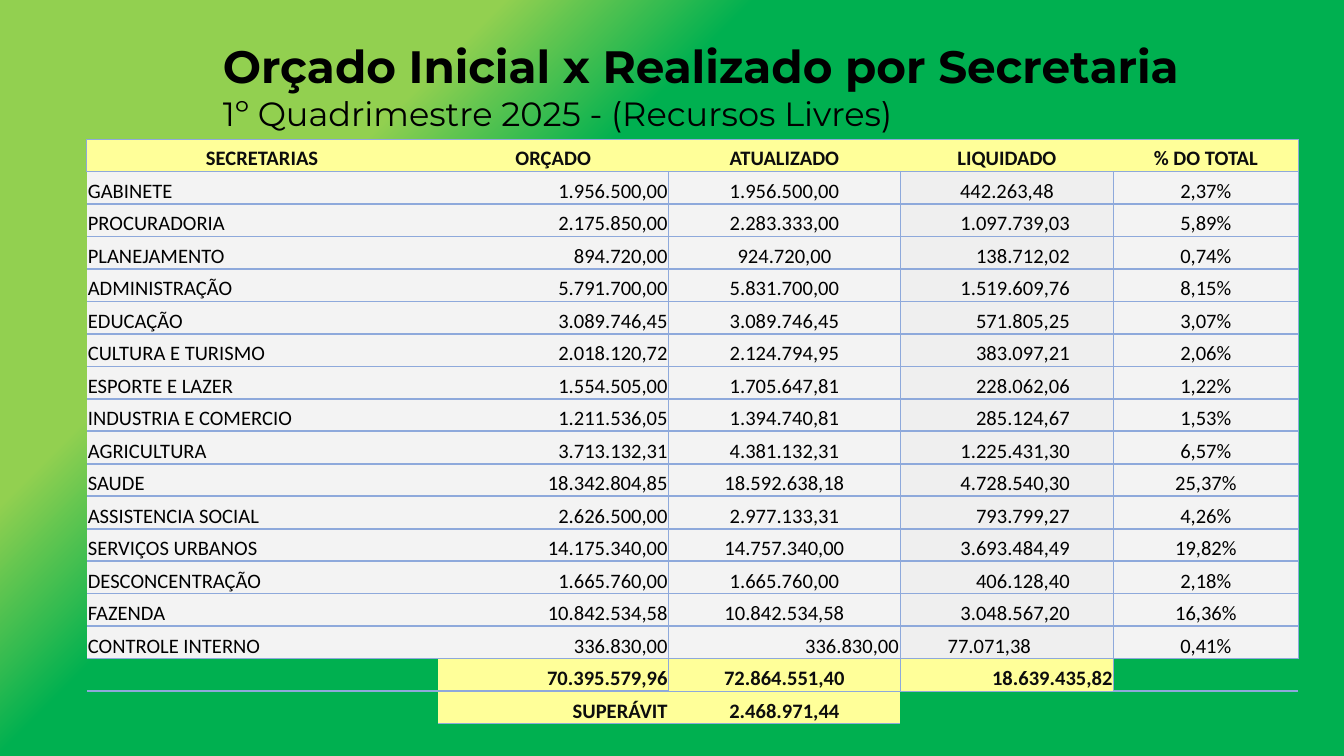
import collections

import lxml.etree
import pptx
import pptx.dml.color
import pptx.enum.text
import pptx.oxml.ns
import pptx.util

Cm = pptx.util.Cm
Pt = pptx.util.Pt
qn = pptx.oxml.ns.qn
RGBColor = pptx.dml.color.RGBColor
ALIGN = pptx.enum.text.PP_ALIGN
ANCHOR = pptx.enum.text.MSO_ANCHOR

LIME = RGBColor(0x92, 0xD0, 0x50)
GREEN = RGBColor(0x00, 0xB0, 0x50)
YELLOW = RGBColor(0xFF, 0xFF, 0x99)
LIGHT_GRAY = RGBColor(0xF3, 0xF3, 0xF3)
GRAY = RGBColor(0xEF, 0xEF, 0xEF)
BLUE = RGBColor(0x8E, 0xA9, 0xDB)
INK = RGBColor(0x0D, 0x0D, 0x0D)
BLACK = RGBColor(0, 0, 0)

Box = collections.namedtuple("Box", "left top width height")

NO_STYLE = "{2D5ABB26-0587-4C30-8999-92F81FD0307C}"
THIN, THICK = 0.5, 1
CELL_MARGIN = Cm(0.02)
AMOUNT_MARGIN = Cm(0.83)
COLUMN_WIDTHS = (6.63, 4.37, 4.37, 4.04, 3.48)
COLUMN_ALIGN = (ALIGN.LEFT, ALIGN.RIGHT, ALIGN.CENTER, ALIGN.RIGHT, ALIGN.CENTER)

HEADER = ("SECRETARIAS", "ORÇADO", "ATUALIZADO", "LIQUIDADO", "% DO TOTAL")
DEPARTMENTS = (
    ("GABINETE", "1.956.500,00", "1.956.500,00", "442.263,48", "2,37%"),
    ("PROCURADORIA", "2.175.850,00", "2.283.333,00", "1.097.739,03", "5,89%"),
    ("PLANEJAMENTO", "894.720,00", "924.720,00", "138.712,02", "0,74%"),
    ("ADMINISTRAÇÃO", "5.791.700,00", "5.831.700,00", "1.519.609,76", "8,15%"),
    ("EDUCAÇÃO", "3.089.746,45", "3.089.746,45", "571.805,25", "3,07%"),
    ("CULTURA E TURISMO", "2.018.120,72", "2.124.794,95", "383.097,21", "2,06%"),
    ("ESPORTE E LAZER", "1.554.505,00", "1.705.647,81", "228.062,06", "1,22%"),
    ("INDUSTRIA E COMERCIO", "1.211.536,05", "1.394.740,81", "285.124,67", "1,53%"),
    ("AGRICULTURA", "3.713.132,31", "4.381.132,31", "1.225.431,30", "6,57%"),
    ("SAUDE", "18.342.804,85", "18.592.638,18", "4.728.540,30", "25,37%"),
    ("ASSISTENCIA SOCIAL", "2.626.500,00", "2.977.133,31", "793.799,27", "4,26%"),
    ("SERVIÇOS URBANOS", "14.175.340,00", "14.757.340,00", "3.693.484,49", "19,82%"),
    ("DESCONCENTRAÇÃO", "1.665.760,00", "1.665.760,00", "406.128,40", "2,18%"),
    ("FAZENDA", "10.842.534,58", "10.842.534,58", "3.048.567,20", "16,36%"),
    ("CONTROLE INTERNO", "336.830,00", "336.830,00", "77.071,38", "0,41%"),
)
TOTALS = ("", "70.395.579,96", "72.864.551,40", "18.639.435,82", "")
SURPLUS = ("", "SUPERÁVIT", "2.468.971,44", "", "")


def paint_background(page):
    fill = page.background.fill
    fill.gradient()
    fill.gradient_angle = 315
    stops = page._element.find(".//" + qn("a:gsLst"))
    for stop in list(stops):
        stops.remove(stop)
    for percent, color in ((0, LIME), (24, LIME), (36, GREEN), (100, GREEN)):
        stop = lxml.etree.SubElement(stops, qn("a:gs"), pos=str(percent * 1000))
        lxml.etree.SubElement(stop, qn("a:srgbClr"), val=str(color))


def place_title(page, box):
    title = page.shapes.title
    title.left, title.top, title.width, title.height = box
    frame = title.text_frame
    frame.auto_size = pptx.enum.text.MSO_AUTO_SIZE.NONE
    frame.vertical_anchor = ANCHOR.BOTTOM
    para = frame.paragraphs[0]
    para.alignment = ALIGN.LEFT
    para.font.name = "Montserrat"
    para.font.color.rgb = BLACK
    heading = para.add_run()
    heading.text = "Orçado Inicial x Realizado por Secretaria"
    heading.font.size, heading.font.bold = Pt(24.3), True
    para.add_line_break()
    period = para.add_run()
    period.text = "1º Quadrimestre 2025 - (Recursos Livres)"
    period.font.size, period.font.bold = Pt(18), False


def draw_borders(cell, **widths):
    properties = cell._tc.get_or_add_tcPr()
    for side in ("L", "R", "T", "B"):
        if widths.get(side):
            line = lxml.etree.SubElement(
                properties, qn("a:ln" + side), w=str(Pt(widths[side])))
            solid = lxml.etree.SubElement(line, qn("a:solidFill"))
            lxml.etree.SubElement(solid, qn("a:srgbClr"), val=str(BLUE))


def fill_cell(cell, text, align, color=None, bold=False):
    cell.vertical_anchor = ANCHOR.BOTTOM
    cell.margin_left = cell.margin_right = cell.margin_top = CELL_MARGIN
    cell.margin_bottom = 0
    if color is None:
        cell.fill.background()
    else:
        cell.fill.solid()
        cell.fill.fore_color.rgb = color
    para = cell.text_frame.paragraphs[0]
    para.alignment = align
    para.font.name, para.font.size, para.font.bold = "Calibri", Pt(11), bold
    para.font.color.rgb = INK if bold else BLACK
    if text:
        para.add_run().text = text
    else:
        # Keeps an empty cell from stretching its row
        lxml.etree.SubElement(para._p, qn("a:endParaRPr"), sz="1100")


def place_table(page, box):
    row_count = len(DEPARTMENTS) + 3
    frame = page.shapes.add_table(row_count, len(HEADER), *box)
    table = frame.table
    table.horz_banding = False
    table._tbl.tblPr.find(qn("a:tableStyleId")).text = NO_STYLE
    for column, width in zip(table.columns, COLUMN_WIDTHS):
        column.width = Cm(width)
    header_height = Cm(0.6)
    for row in table.rows:
        row.height = (box.height - header_height) // (row_count - 1)
    table.rows[0].height = header_height
    last = len(HEADER) - 1

    # Header
    for index, text in enumerate(HEADER):
        cell = table.cell(0, index)
        draw_borders(cell, L=THIN if index == 0 else 0,
                     R=THIN if index == last else 0, T=THIN, B=THIN)
        fill_cell(cell, text, ALIGN.CENTER, YELLOW, bold=True)

    # Departments
    for number, values in enumerate(DEPARTMENTS, 1):
        for index, text in enumerate(values):
            cell = table.cell(number, index)
            draw_borders(cell, L=THIN if index > 1 else 0,
                         R=THIN if index > 0 else 0,
                         T=THIN if number == 1 else THICK, B=THICK)
            fill_cell(cell, text, COLUMN_ALIGN[index],
                      GRAY if index == 3 else LIGHT_GRAY)
            if index == 3:
                cell.margin_right = AMOUNT_MARGIN

    # Amounts that are aligned differently from their column
    first_paid = table.cell(1, 3)
    first_paid.margin_right = CELL_MARGIN
    first_paid.text_frame.paragraphs[0].alignment = ALIGN.CENTER
    final = len(DEPARTMENTS)
    table.cell(final, 2).text_frame.paragraphs[0].alignment = ALIGN.RIGHT
    last_paid = table.cell(final, 3)
    last_paid.margin_left, last_paid.margin_right = Cm(0.9), CELL_MARGIN
    last_paid.text_frame.paragraphs[0].alignment = ALIGN.LEFT

    # Totals and surplus
    total_borders = {1: dict(R=THIN, B=THICK), 2: dict(L=THIN, R=THIN, B=THIN),
                     3: dict(L=THIN, B=THIN)}
    surplus_borders = {1: dict(T=THICK, B=THICK), 2: dict(T=THIN, B=THICK),
                       3: dict(T=THIN)}
    for number, values, borders, top in (
            (final + 1, TOTALS, total_borders, THICK),
            (final + 2, SURPLUS, surplus_borders, 0)):
        for index, text in enumerate(values):
            cell = table.cell(number, index)
            draw_borders(cell, **{"T": top, **borders.get(index, {})})
            fill_cell(cell, text, COLUMN_ALIGN[index],
                      YELLOW if text else None, bold=True)


def main():
    deck = pptx.Presentation()
    deck.slide_width, deck.slide_height = Cm(25.4), Cm(14.29)
    page = deck.slides.add_slide(deck.slide_layouts[5])
    paint_background(page)
    place_title(page, Box(Cm(3.96), Cm(0.58), Cm(20.6), Cm(2.06)))
    place_table(page, Box(Cm(1.64), Cm(2.64), Cm(22.89), Cm(11.05)))
    deck.save("out.pptx")


if __name__ == "__main__":
    main()
